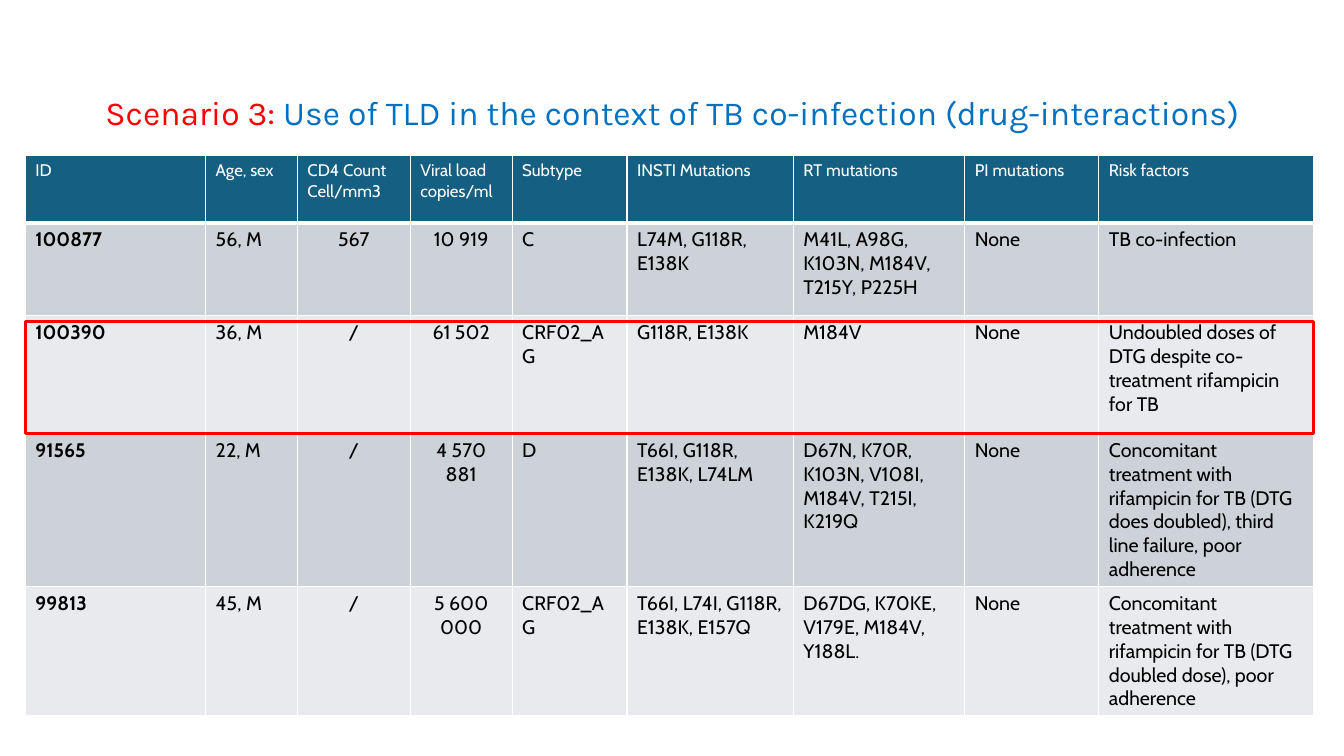
from lxml.etree import SubElement
from pptx import Presentation
from pptx.dml.color import RGBColor
from pptx.enum.shapes import MSO_SHAPE as Shape
from pptx.enum.text import MSO_ANCHOR as Anchor, PP_ALIGN as Align
from pptx.oxml import parse_xml
from pptx.oxml.ns import nsdecls, qn
from pptx.util import Inches, Pt

WHITE = RGBColor(0xFF, 0xFF, 0xFF)
BLACK = RGBColor(0, 0, 0)
RED = RGBColor(0xFF, 0, 0)
BLUE = RGBColor(0x00, 0x70, 0xC0)
TEAL = RGBColor(0x15, 0x60, 0x82)
BANDS = (RGBColor(0xCC, 0xD2, 0xD8), RGBColor(0xE8, 0xEA, 0xED))

LEFT, WIDTH = 0.25, 12.78
COLUMNS = (1.79, 0.91, 1.12, 1.01, 1.14, 1.65, 1.7, 1.33, 2.13)
ROWS = (0.67, 0.92, 1.17, 1.17, 1.17)
CENTRED = (2, 3)

HEADINGS = ("ID", "Age, sex", "CD4 Count\nCell/mm3", "Viral load copies/ml", "Subtype",
            "INSTI Mutations", "RT mutations", "PI mutations", "Risk factors")
PATIENTS = (
    ("100877", "56, M", "567", "10 919", "C", "L74M, G118R, E138K",
     "M41L, A98G, K103N, M184V, T215Y, P225H", "None", "TB co-infection"),
    ("100390", "36, M", "/", "61 502", "CRF02_AG", "G118R, E138K", "M184V", "None",
     "Undoubled doses of DTG despite co-treatment rifampicin for TB"),
    ("91565", "22, M", "/", "4 570 881", "D", "T66I, G118R, E138K, L74LM",
     "D67N, K70R, K103N, V108I, M184V, T215I, K219Q", "None",
     "Concomitant treatment with rifampicin for TB (DTG does doubled), "
     "third line failure, poor adherence"),
    ("99813", "45, M", "/", "5 600 000", "CRF02_AG", "T66I, L74I, G118R, E138K, E157Q",
     "D67DG, K70KE, V179E, M184V, Y188L.", "None",
     "Concomitant treatment with rifampicin for TB (DTG doubled dose), poor adherence"),
)


def add_run(paragraph, text, font, size, color, bold=False):
    """Append one styled run to a paragraph."""
    run = paragraph.add_run()
    run.text = text
    run.font.name = font
    run.font.size = Pt(size)
    run.font.color.rgb = color
    run.font.bold = bold


def set_borders(cell, bottom):
    """Draw white one-point borders, with the given weight at the bottom."""
    properties = cell._tc.get_or_add_tcPr()
    for position, (side, weight) in enumerate(zip("LRTB", (1, 1, 1, bottom))):
        border = parse_xml(f'<a:ln{side} {nsdecls("a")} w="{Pt(weight)}"/>')
        fill = SubElement(border, qn("a:solidFill"))
        SubElement(fill, qn("a:srgbClr"), val=str(WHITE))
        properties.insert(position, border)


def fill_cell(cell, text, fill, size, color, bold=False, align=Align.LEFT, bottom=1):
    """Write a cell's text and set its fill and borders."""
    cell.fill.solid()
    cell.fill.fore_color.rgb = fill
    set_borders(cell, bottom)
    for index, line in enumerate(text.split("\n")):
        frame = cell.text_frame
        paragraph = frame.add_paragraph() if index else frame.paragraphs[0]
        paragraph.alignment = align
        add_run(paragraph, line, "Cabin", size, color, bold)


def add_patient_table(slide):
    """Add the table of patients with its heading row."""
    table = slide.shapes.add_table(len(ROWS), len(COLUMNS), Inches(LEFT), Inches(1.54),
                                   Inches(WIDTH), Inches(sum(ROWS))).table
    for column, width in zip(table.columns, COLUMNS):
        column.width = Inches(width)
    for row, height in zip(table.rows, ROWS):
        row.height = Inches(height)
    for column, heading in enumerate(HEADINGS):
        fill_cell(table.cell(0, column), heading, TEAL, 12, WHITE, bottom=3)
    for row, patient in enumerate(PATIENTS):
        for column, value in enumerate(patient):
            align = Align.CENTER if column in CENTRED else Align.LEFT
            fill_cell(table.cell(row + 1, column), value, BANDS[row % 2], 14, BLACK,
                      bold=column == 0, align=align)


def add_title(slide):
    """Add the two-coloured scenario title."""
    frame = slide.shapes.add_textbox(Inches(0.5), Inches(0.91),
                                     Inches(12.34), Inches(0.45)).text_frame
    frame.word_wrap = True
    frame.vertical_anchor = Anchor.MIDDLE
    paragraph = frame.paragraphs[0]
    paragraph.alignment = Align.CENTER
    paragraph.line_spacing = 0.9
    add_run(paragraph, "Scenario 3:", "Karla", 24, RED)
    add_run(paragraph, " Use of TLD in the context of TB co-infection (drug-interactions)",
            "Karla", 24, BLUE)


def add_highlight(slide):
    """Frame the second patient's row in red."""
    highlight = slide.shapes.add_shape(Shape.RECTANGLE, Inches(LEFT), Inches(3.19),
                                       Inches(WIDTH), Inches(1.11))
    highlight.shadow.inherit = False
    highlight.fill.background()
    highlight.line.color.rgb = RED
    highlight.line.width = Pt(2.25)


def main():
    """Build the slide and save it."""
    deck = Presentation()
    deck.slide_width, deck.slide_height = Inches(13.33), Inches(7.5)
    slide = deck.slides.add_slide(deck.slide_layouts[6])
    add_patient_table(slide)
    add_title(slide)
    add_highlight(slide)
    deck.save("out.pptx")


if __name__ == "__main__":
    main()
